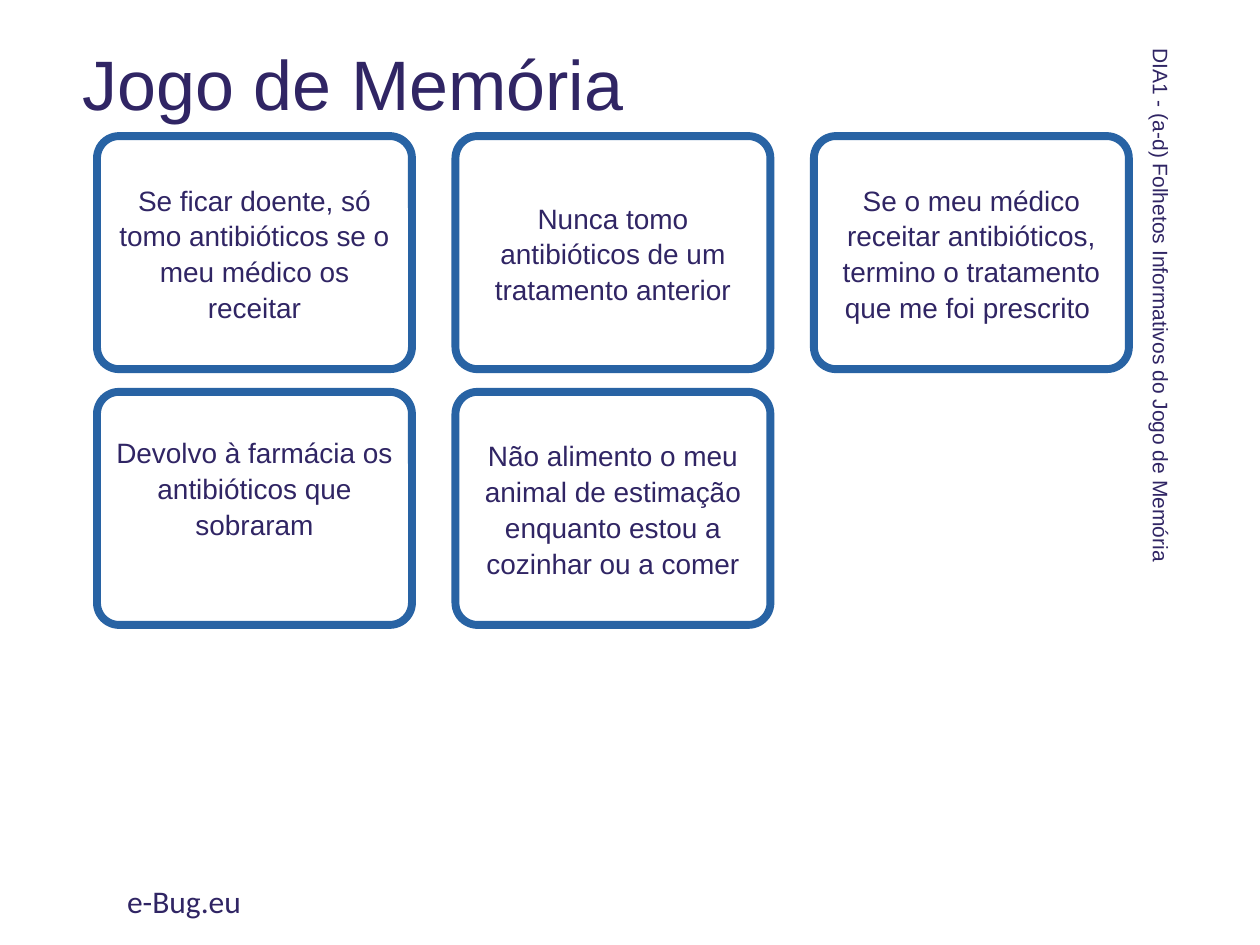
from pptx import Presentation
from pptx.dml.color import RGBColor
from pptx.enum.shapes import MSO_SHAPE
from pptx.enum.text import MSO_ANCHOR, PP_ALIGN
from pptx.util import Inches, Pt

INK, BLUE = "302564", "2863A4"

# Card grid, in inches
LEFT, TOP, CARD_W, CARD_H = 0.77, 1.08, 2.5, 1.85
COL_STEP, ROW_STEP, COLUMNS = 2.845, 2.03, 3

CARDS = [
    "Se ficar doente, só tomo antibióticos se o meu médico os receitar",
    "Nunca tomo antibióticos de um tratamento anterior",
    "Se o meu médico receitar antibióticos, termino o tratamento que me foi prescrito ",
    "Devolvo à farmácia os antibióticos que sobraram",
    "Não alimento o meu animal de estimação enquanto estou a cozinhar ou a comer",
]
RAISED_CARD = 3  # its text sits above the middle


def color(value):
    return RGBColor.from_string(value)


def set_text(tf, text, size, font="Arial"):
    p = tf.paragraphs[0]
    p.text = text
    p.font.size = Pt(size)
    p.font.name = font
    p.font.color.rgb = color(INK)
    return p


def add_label(s, box, text, size, font="Arial", wrap=True):
    sp = s.shapes.add_textbox(*map(Inches, box))
    sp.text_frame.word_wrap = wrap
    set_text(sp.text_frame, text, size, font)
    return sp


def add_card(s, index, text):
    row, col = divmod(index, COLUMNS)
    sp = s.shapes.add_shape(
        MSO_SHAPE.ROUNDED_RECTANGLE,
        Inches(LEFT + col * COL_STEP), Inches(TOP + row * ROW_STEP),
        Inches(CARD_W), Inches(CARD_H))
    sp.adjustments[0] = 0.095
    sp.shadow.inherit = False
    sp.fill.background()
    sp.line.color.rgb = color(BLUE)
    sp.line.width = Pt(4.5)
    tf = sp.text_frame
    tf.word_wrap = True
    tf.vertical_anchor = MSO_ANCHOR.MIDDLE
    p = set_text(tf, text, 16)
    p.alignment = PP_ALIGN.CENTER
    p.line_spacing = 1.07
    p.space_after = Pt(8)
    return sp


def main():
    prs = Presentation()
    prs.slide_width, prs.slide_height = Inches(10), Inches(7.5)
    s = prs.slides.add_slide(prs.slide_layouts[6])

    # Title
    title = add_label(s, (0.56, 0.09, 9, 1.22), "Jogo de Memória", 40).text_frame
    title.vertical_anchor = MSO_ANCHOR.MIDDLE
    title.paragraphs[0].line_spacing = 0.9

    # Memory cards
    cards = [add_card(s, i, text) for i, text in enumerate(CARDS)]
    cards[RAISED_CARD].text_frame.margin_bottom = Inches(0.38)

    # Vertical side label and footer
    side = add_label(s, (7.06, 2.29, 4.31, 0.3),
                     "DIA1 - (a-d) Folhetos Informativos do Jogo de Memória", 12, wrap=False)
    side.rotation = 90
    add_label(s, (0.91, 6.95, 3.38, 0.4), "e-Bug.eu", 18, "Calibri")

    prs.save("out.pptx")


if __name__ == "__main__":
    main()
